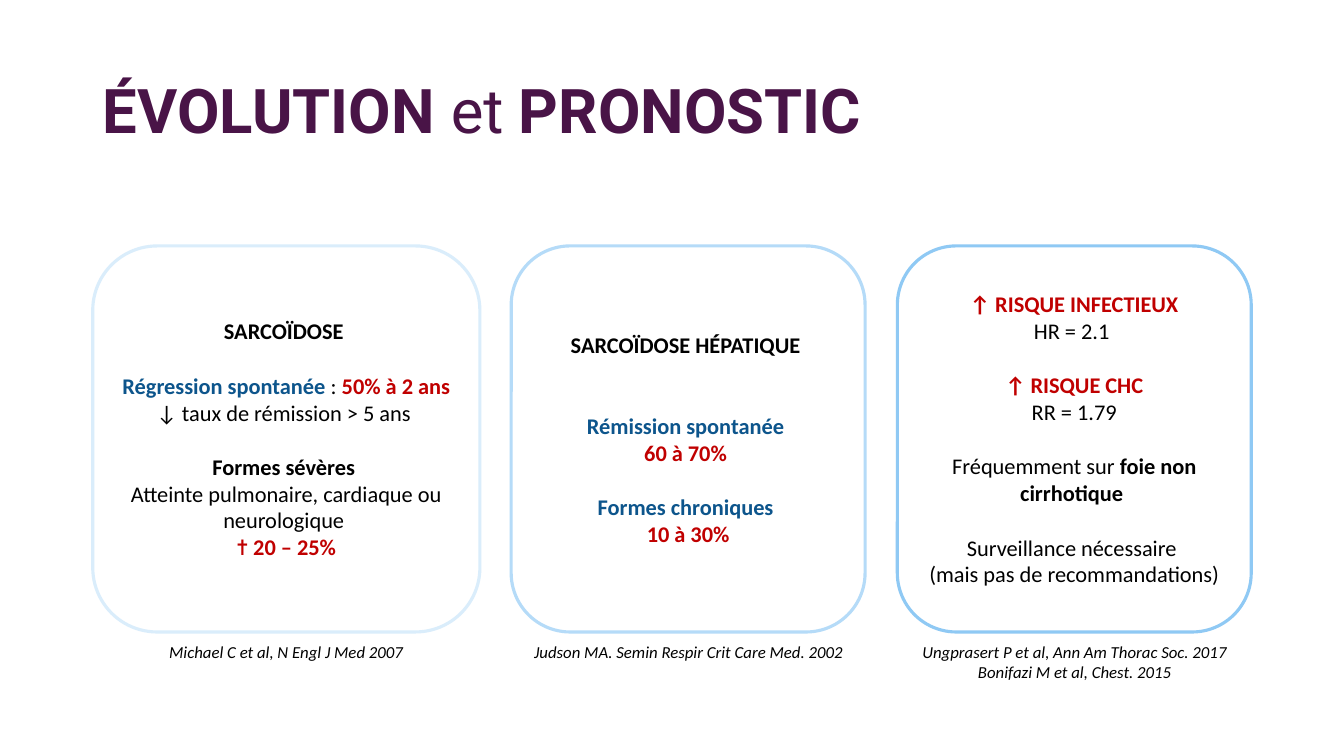
import dataclasses

import pptx
import pptx.dml.color
import pptx.enum.shapes
import pptx.enum.text
import pptx.util

PX = 9144  # 100 px to the inch
CENTER = pptx.enum.text.PP_ALIGN.CENTER
MIDDLE = pptx.enum.text.MSO_ANCHOR.MIDDLE


@dataclasses.dataclass(frozen=True)
class Theme:
    title_font: str = "Roboto"
    body_font: str = "Calibri"
    title_size: int = 44
    body_size: int = 16
    citation_size: int = 12
    blank_line: float = 19.5
    outline: float = 2.25
    purple: str = "491447"
    black: str = "000000"
    blue: str = "0D558C"
    red: str = "C00000"
    card_lines: tuple = ("DAEDFB", "B5DBF8", "8FC9F4")


THEME = Theme()
CARD_TOP, CARD_HEIGHT = 244, 383
CITATION_TOP, CITATION_WIDTH = 632, 416

# Run styles
PLAIN = {"color": THEME.black}
BOLD = {"color": THEME.black, "bold": True}
BLUE = {"color": THEME.blue, "bold": True}
RED = {"color": THEME.red, "bold": True}

# Each card: left, width, lines (blank lines above, runs), citations
CARDS = [
    (92, 384, [
        (0, [("SARCOÏDOSE ", BOLD)]),
        (1, [("Régression spontanée ", BLUE), (": ", PLAIN), ("50% à 2 ans", RED)]),
        (0, [("↓ taux de rémission > 5 ans ", PLAIN)]),
        (1, [("Formes sévères ", BOLD)]),
        (0, [("Atteinte pulmonaire, cardiaque ou neurologique ", PLAIN)]),
        (0, [("✝ 20 – 25%", RED)]),
    ], ["Michael C et al, N Engl J Med 2007"]),
    (507, 351, [
        (0, [("SARCOÏDOSE HÉPATIQUE ", BOLD)]),
        (2, [("Rémission spontanée ", BLUE)]),
        (0, [("60 à 70% ", RED)]),
        (1, [("Formes chroniques ", BLUE)]),
        (0, [("10 à 30%", RED)]),
    ], ["Judson MA. Semin Respir Crit Care Med. 2002"]),
    (890, 351, [
        (0, [("↑ RISQUE INFECTIEUX", RED)]),
        (0, [("HR = 2.1 ", PLAIN)]),
        (1, [("↑ RISQUE CHC", RED)]),
        (0, [("RR = 1.79", PLAIN)]),
        (1, [("Fréquemment sur ", PLAIN), ("foie non cirrhotique ", BOLD)]),
        (1, [("Surveillance nécessaire ", PLAIN)]),
        (0, [("(mais pas de recommandations)", PLAIN)]),
    ], ["Ungprasert P et al, Ann Am Thorac Soc. 2017",
        "Bonifazi M et al, Chest. 2015"]),
]


def box(left, top, width, height):
    return [pptx.util.Emu(value * PX) for value in (left, top, width, height)]


def rgb(color):
    return pptx.dml.color.RGBColor.from_string(color)


def add_run(paragraph, text, *, size=THEME.body_size, font=THEME.body_font,
            color=THEME.black, bold=False, italic=False):
    run = paragraph.add_run()
    run.text = text
    run.font.size = pptx.util.Pt(size)
    run.font.name = font
    run.font.color.rgb = rgb(color)
    run.font.bold = bold
    run.font.italic = italic


def next_paragraph(frame, index):
    return frame.add_paragraph() if index else frame.paragraphs[0]


def add_title(slide, runs):
    frame = slide.shapes.add_textbox(*box(92, 40, 1150, 145)).text_frame
    frame.word_wrap = True
    frame.vertical_anchor = MIDDLE
    paragraph = frame.paragraphs[0]
    paragraph.line_spacing = 0.9
    for text, bold in runs:
        add_run(paragraph, text, size=THEME.title_size, font=THEME.title_font,
                color=THEME.purple, bold=bold)


def add_card(slide, left, width, lines, line_color):
    shape = slide.shapes.add_shape(
        pptx.enum.shapes.MSO_SHAPE.ROUNDED_RECTANGLE,
        *box(left, CARD_TOP, width, CARD_HEIGHT))
    shape.shadow.inherit = False
    shape.fill.background()
    shape.line.color.rgb = rgb(line_color)
    shape.line.width = pptx.util.Pt(THEME.outline)
    frame = shape.text_frame
    frame.word_wrap = True
    frame.vertical_anchor = MIDDLE
    for index, (blank_lines, runs) in enumerate(lines):
        paragraph = next_paragraph(frame, index)
        paragraph.alignment = CENTER
        paragraph.space_before = pptx.util.Pt(blank_lines * THEME.blank_line)
        for text, style in runs:
            add_run(paragraph, text, **style)


def add_citations(slide, center, citations):
    left = center - CITATION_WIDTH // 2
    height = 10 + 20 * len(citations)
    frame = slide.shapes.add_textbox(
        *box(left, CITATION_TOP, CITATION_WIDTH, height)).text_frame
    frame.word_wrap = True
    for index, citation in enumerate(citations):
        paragraph = next_paragraph(frame, index)
        paragraph.alignment = CENTER
        add_run(paragraph, citation, size=THEME.citation_size, italic=True)


def main():
    presentation = pptx.Presentation()
    presentation.slide_width = pptx.util.Emu(1333 * PX)
    presentation.slide_height = pptx.util.Emu(750 * PX)
    slide = presentation.slides.add_slide(presentation.slide_layouts[6])

    # Heading
    add_title(slide, [("ÉVOLUTION ", True), ("et", False), (" PRONOSTIC", True)])

    # Cards with their sources below
    for (left, width, lines, citations), color in zip(CARDS, THEME.card_lines):
        add_card(slide, left, width, lines, color)
        add_citations(slide, left + (width + 1) // 2, citations)

    presentation.save("out.pptx")


if __name__ == "__main__":
    main()
